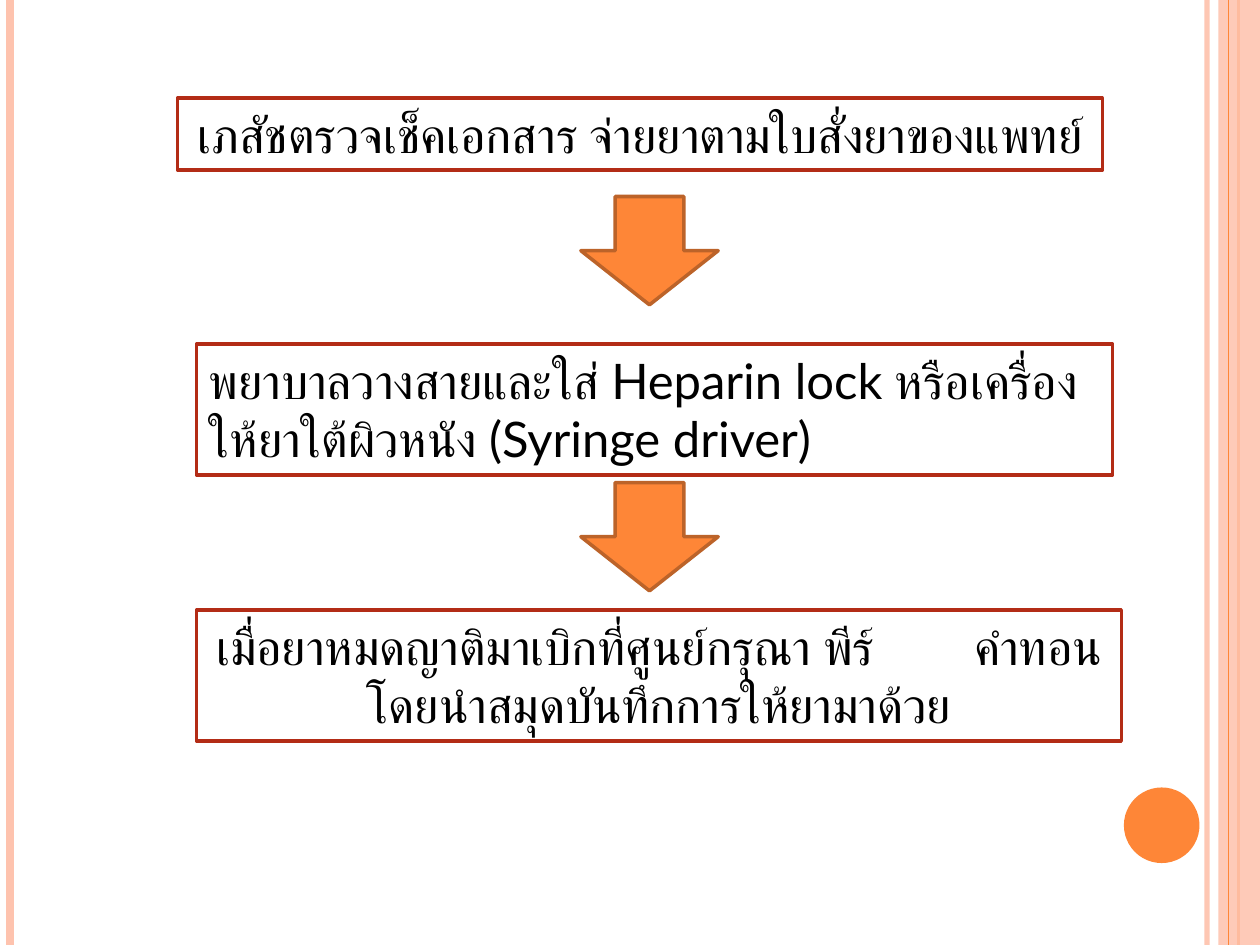
from lxml import etree
from pptx import Presentation
from pptx import util as u
from pptx.dml.color import RGBColor
from pptx.enum import shapes, text
from pptx.oxml.ns import qn

W, H = 10, 7.5
PEACH, ORANGE, BROWN = "FEC3AE", "FE8637", "BC6329"
RED, WHITE, BLACK = "B32C16", "FFFFFF", "000000"
FONT, SIZE = "Lato", 28
WIDE_GAP = 5000  # extra width of one space, in hundredths of a point
LEFT, CENTER = text.PP_ALIGN.LEFT, text.PP_ALIGN.CENTER
TOP, MIDDLE = text.MSO_ANCHOR.TOP, text.MSO_ANCHOR.MIDDLE


def color(hex_code):
    return RGBColor.from_string(hex_code)


def set_alpha(fill, percent):
    clr = fill._xPr.find(qn("a:solidFill"))[0]
    etree.SubElement(clr, qn("a:alpha"), val=str(percent * 1000))


def add_stripe(s, x, hex_code, width, alpha=None):
    """Full-height vertical line."""
    line = s.shapes.add_connector(shapes.MSO_CONNECTOR.STRAIGHT,
                                  u.Inches(x), 0, u.Inches(x), u.Inches(H))
    line.line.color.rgb = color(hex_code)
    line.line.width = u.Pt(width)
    if alpha:
        set_alpha(line.line.fill, alpha)
    etree.SubElement(line._element.spPr, qn("a:effectLst"))


def add_block(s, kind, box, fill, line=None, alpha=None):
    """Filled preset shape, outlined when a line colour is given."""
    sp = s.shapes.add_shape(kind, *(u.Inches(v) for v in box))
    sp.shadow.inherit = False
    sp.fill.solid()
    sp.fill.fore_color.rgb = color(fill)
    if alpha:
        set_alpha(sp.fill, alpha)
    if line:
        sp.line.color.rgb = color(line)
        sp.line.width = u.Pt(2)
    else:
        sp.line.fill.background()
    return sp


def add_step(s, box, paragraphs, align=CENTER, anchor=TOP):
    """Step box; each paragraph is a list of runs."""
    sp = add_block(s, shapes.MSO_SHAPE.RECTANGLE, box, WHITE, RED)
    tf = sp.text_frame
    tf.word_wrap = True
    tf.auto_size = text.MSO_AUTO_SIZE.SHAPE_TO_FIT_TEXT
    tf.vertical_anchor = anchor
    for i, runs in enumerate(paragraphs):
        p = tf.paragraphs[0] if i == 0 else tf.add_paragraph()
        p.alignment = align
        for wording in runs:
            r = p.add_run()
            r.text = wording
            r.font.name = FONT
            r.font.size = u.Pt(SIZE)
            r.font.color.rgb = color(BLACK)
            if wording == " ":
                r._r.get_or_add_rPr().set("spc", str(WIDE_GAP))


def add_frame(s):
    """Side stripes and corner dot."""
    add_stripe(s, 9.58, PEACH, 3, alpha=93)
    add_stripe(s, 0.08, PEACH, 4.5)
    add_stripe(s, 9.83, ORANGE, 1.5)
    add_block(s, shapes.MSO_SHAPE.RECTANGLE, (9.67, 0, W - 9.67, H), PEACH, alpha=87)
    add_stripe(s, 9.75, ORANGE, 0.75)
    add_block(s, shapes.MSO_SHAPE.OVAL, (8.92, 6.25, 0.6, 0.6), ORANGE)


def main():
    prs = Presentation()
    prs.slide_width, prs.slide_height = u.Inches(W), u.Inches(H)
    s = prs.slides.add_slide(prs.slide_layouts[6])
    add_frame(s)

    # Steps from top to bottom
    add_step(s, (1.41, 0.78, 7.34, 0.57),
             [["เภสัชตรวจเช็คเอกสาร จ่ายยาตามใบสั่งยาของแพทย์"]], anchor=MIDDLE)
    add_step(s, (1.56, 2.73, 7.27, 1.04),
             [["พยาบาลวางสายและใส่ Heparin lock หรือเครื่องให้ยาใต้ผิวหนัง (Syringe driver)"]],
             align=LEFT)
    add_step(s, (1.56, 4.84, 7.34, 1.04),
             [["เมื่อยาหมดญาติมาเบิกที่ศูนย์กรุณา พีร์", " ", "คำทอน"],
              ["โดยนำสมุดบันทึกการให้ยามาด้วย"]])

    # Arrows between the steps
    for top in (1.56, 3.83):
        add_block(s, shapes.MSO_SHAPE.DOWN_ARROW, (4.61, top, 1.09, 0.86), ORANGE, BROWN)

    prs.save("out.pptx")


if __name__ == "__main__":
    main()
